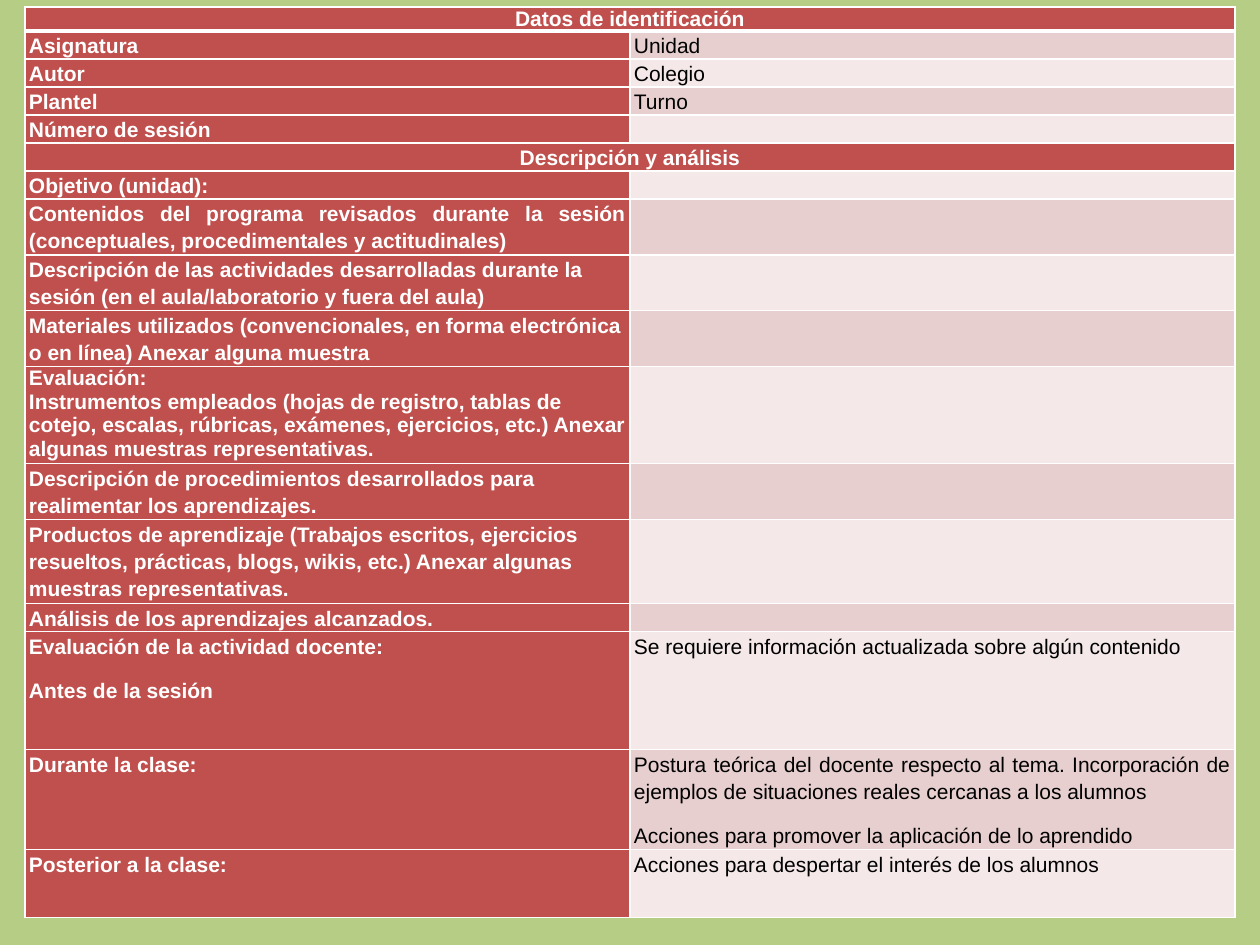
"""Build a class-session record form as a two-column table slide."""
import dataclasses
import typing

import lxml.etree
import pptx
import pptx.dml.color
import pptx.enum.text
import pptx.oxml.ns
import pptx.util

ALIGN = pptx.enum.text.PP_ALIGN
ANCHOR = pptx.enum.text.MSO_ANCHOR
EMU_PER_PX = 914400 / 126
SLIDE_WIDTH, SLIDE_HEIGHT = 1260, 945
FORM_LEFT, FORM_TOP, COLUMN_WIDTH = 25, 7, 605
SIDE_MARGIN = 4
FONT_NAME, FONT_SIZE = "Arial", 12
COLORS = {
    "background": "B5CD84",
    "label": "C0504D",
    "band_dark": "E8CFCF",
    "band_light": "F4E8E8",
    "white": "FFFFFF",
    "black": "000000",
}


@dataclasses.dataclass(frozen=True)
class FormRow:
    """One row of the form; a heading spans both columns."""
    height: int
    label: tuple[str, ...]
    answer: tuple[str, ...] = ()
    heading: bool = False
    label_align: typing.Any = ALIGN.LEFT
    label_spacing: float = 1.15


FORM_ROWS = [
    FormRow(24, ("Datos de identificación",), heading=True, label_spacing=1.0),
    FormRow(28, ("Asignatura",), ("Unidad",)),
    FormRow(28, ("Autor",), ("Colegio",)),
    FormRow(28, ("Plantel",), ("Turno",)),
    FormRow(28, ("Número de sesión",)),
    FormRow(28, ("Descripción y análisis",), heading=True),
    FormRow(28, ("Objetivo (unidad):",)),
    FormRow(56, ("Contenidos del programa revisados durante la sesión "
                 "(conceptuales, procedimentales y actitudinales)",),
            label_align=ALIGN.JUSTIFY),
    FormRow(56, ("Descripción de las actividades desarrolladas durante la sesión "
                 "(en el aula/laboratorio y fuera del aula)",)),
    FormRow(56, ("Materiales utilizados (convencionales, en forma electrónica "
                 "o en línea) Anexar alguna muestra",)),
    FormRow(97, ("Evaluación:",
                 "Instrumentos empleados (hojas de registro, tablas de cotejo, escalas, "
                 "rúbricas, exámenes, ejercicios, etc.) Anexar algunas muestras "
                 "representativas."), label_spacing=1.0),
    FormRow(56, ("Descripción de procedimientos desarrollados para realimentar "
                 "los aprendizajes.",)),
    FormRow(84, ("Productos de aprendizaje (Trabajos escritos, ejercicios resueltos, "
                 "prácticas, blogs, wikis, etc.) Anexar algunas muestras "
                 "representativas.",)),
    FormRow(28, ("Análisis de los aprendizajes alcanzados.",)),
    FormRow(118, ("Evaluación de la actividad docente:", "Antes de la sesión"),
            ("Se requiere información actualizada sobre algún contenido",)),
    FormRow(100, ("Durante la clase:",),
            ("Postura teórica del docente respecto al tema. Incorporación de ejemplos "
             "de situaciones reales cercanas a los alumnos",
             "Acciones para promover la aplicación de lo aprendido")),
    FormRow(68, ("Posterior a la clase:",),
            ("Acciones para despertar el interés de los alumnos",)),
]


def px(length: int) -> int:
    return round(length * EMU_PER_PX)


def rgb(name: str) -> pptx.dml.color.RGBColor:
    return pptx.dml.color.RGBColor.from_string(COLORS[name])


def add_child(parent: typing.Any, tag: str, **attributes: str) -> typing.Any:
    return lxml.etree.SubElement(parent, pptx.oxml.ns.qn(tag), attributes)


def frame_cell(cell: typing.Any, fill: str, top: int = 1, bottom: int = 1) -> None:
    cell.margin_left = cell.margin_right = px(SIDE_MARGIN)
    cell.margin_top = cell.margin_bottom = 0
    properties = cell._tc.get_or_add_tcPr()
    for side, points in (("L", 1), ("R", 1), ("T", top), ("B", bottom)):
        border = add_child(properties, f"a:ln{side}", w=str(pptx.util.Pt(points)))
        add_child(add_child(border, "a:solidFill"), "a:srgbClr", val=COLORS["white"])
    cell.fill.solid()
    cell.fill.fore_color.rgb = rgb(fill)


def write_cell(cell: typing.Any, texts: tuple[str, ...], color: str, bold: bool,
               align: typing.Any, spacing: float) -> None:
    frame = cell.text_frame
    if not texts:
        add_child(frame.paragraphs[0]._p, "a:endParaRPr", sz=str(FONT_SIZE * 100))
    for index, text in enumerate(texts):
        paragraph = frame.add_paragraph() if index else frame.paragraphs[0]
        paragraph.alignment = align
        paragraph.line_spacing = spacing
        if index and spacing > 1:
            paragraph.space_before = pptx.util.Pt(10)
        run = paragraph.add_run()
        run.text = text
        run.font.name = FONT_NAME
        run.font.size = pptx.util.Pt(FONT_SIZE)
        run.font.bold = bold
        run.font.color.rgb = rgb(color)


def draw_row(form: typing.Any, number: int, row: FormRow) -> None:
    form.rows[number].height = px(row.height)
    label, answer = form.cell(number, 0), form.cell(number, 1)
    band = "band_dark" if number % 2 else "band_light"
    top, bottom = 3 if number == 1 else 1, 3 if number == 0 else 1
    frame_cell(label, "label", top, bottom)
    frame_cell(answer, "label" if row.heading else band, top, bottom)
    align = ALIGN.CENTER if row.heading else row.label_align
    write_cell(label, row.label, "white", True, align, row.label_spacing)
    write_cell(answer, row.answer, "black", False, ALIGN.JUSTIFY, 1.15)
    if row.heading:
        label.vertical_anchor = ANCHOR.MIDDLE
        label.merge(answer)


def main() -> None:
    presentation = pptx.Presentation()
    presentation.slide_width, presentation.slide_height = px(SLIDE_WIDTH), px(SLIDE_HEIGHT)
    slide = presentation.slides.add_slide(presentation.slide_layouts[6])
    slide.background.fill.solid()
    slide.background.fill.fore_color.rgb = rgb("background")
    form = slide.shapes.add_table(
        len(FORM_ROWS), 2, px(FORM_LEFT), px(FORM_TOP), px(2 * COLUMN_WIDTH),
        px(sum(row.height for row in FORM_ROWS))).table
    form.first_row = form.horz_banding = False
    for number, row in enumerate(FORM_ROWS):
        draw_row(form, number, row)
    presentation.save("out.pptx")


if __name__ == "__main__":
    main()
